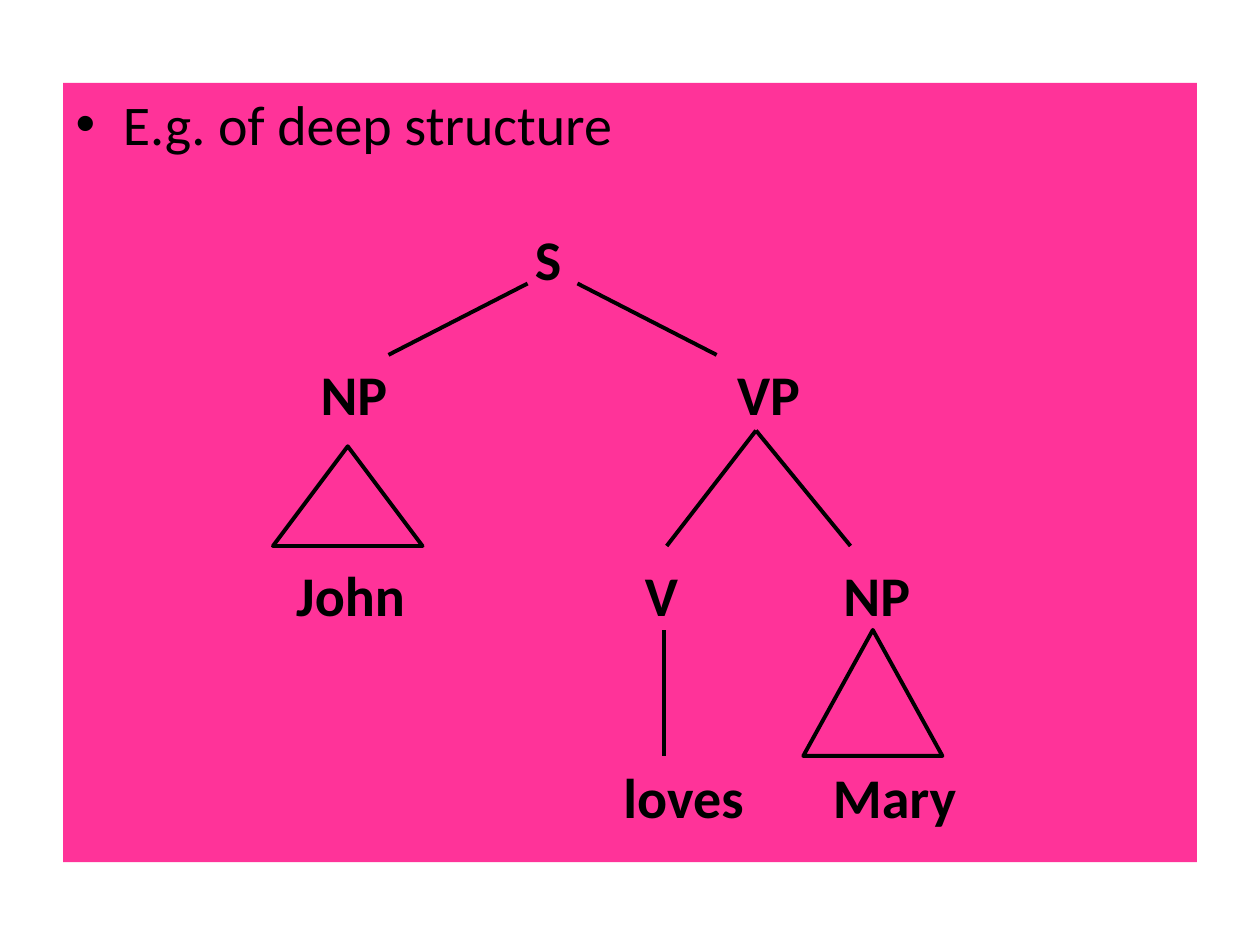
from pptx import Presentation
from pptx.dml.color import RGBColor
from pptx.enum.shapes import MSO_CONNECTOR, MSO_SHAPE
from pptx.enum.text import MSO_ANCHOR, PP_ALIGN
from pptx.oxml.ns import qn
from pptx.util import Inches, Pt
from lxml import etree

LINE = MSO_CONNECTOR.STRAIGHT
PEAK = MSO_SHAPE.ISOSCELES_TRIANGLE
MID = MSO_ANCHOR.MIDDLE
LEFT, MIDST = PP_ALIGN.LEFT, PP_ALIGN.CENTER
PINK = RGBColor(0xFF, 0x33, 0x99)
BLACK = RGBColor(0, 0, 0)

deck = Presentation()
deck.slide_width, deck.slide_height = Inches(10), Inches(7.5)
COL = deck.slide_width / 120
ROW = deck.slide_height / 90
slide = deck.slides.add_slide(deck.slide_layouts[1])
shapes = slide.shapes


def grid(x, y, wide, high):
    return [int(n) for n in (x * COL, y * ROW, wide * COL, high * ROW)]


def write(frame, text, size=32, bold=False, align=LEFT):
    para = frame.paragraphs[0]
    para.alignment = align
    run = para.add_run()
    run.text = text
    run.font.name = "Calibri"
    run.font.size = Pt(size)
    run.font.bold = bold
    run.font.color.rgb = BLACK


title = shapes.title.element
title.getparent().remove(title)
body = shapes.placeholders[1]
body.left, body.top, body.width, body.height = grid(6, 7.9, 108, 74.2)
body.fill.solid()
body.fill.fore_color.rgb = PINK
write(body.text_frame, "E.g. of deep structure")

FIRST, STEP = 24.6, 6.4
WIDE, HIGH = 16, 6.4
nodes = [
    ("S", 52.2, 0),
    ("NP", 33.7, 2), ("VP", 73.2, 2),
    ("John", 33.4, 5), ("V", 63, 5), ("NP", 83.5, 5),
    ("loves", 65.1, 8), ("Mary", 85.2, 8),
]
for word, x, level in nodes:
    y = FIRST + level * STEP
    box = shapes.add_textbox(*grid(x - WIDE / 2, y - HIGH / 2, WIDE, HIGH))
    frame = box.text_frame
    frame.word_wrap = True
    frame.vertical_anchor = MID
    frame.margin_left = frame.margin_right = 0
    frame.margin_top = frame.margin_bottom = 0
    write(frame, word, bold=True, align=MIDST)

edges = [
    (37, 33.8, 50.25, 27), (68.25, 33.8, 55, 27),
    (63.5, 52, 72, 41), (81, 52, 72, 41),
    (63.25, 60, 63.25, 72),
]
for edge in edges:
    branch = shapes.add_connector(LINE, *grid(*edge))
    branch.line.color.rgb = BLACK
    branch.line.width = Pt(2.25)
    etree.SubElement(branch.element.spPr, qn("a:effectLst"))

for spot in [(26, 42.5, 14.25, 9.5), (76.5, 60, 13.25, 12)]:
    peak = shapes.add_shape(PEAK, *grid(*spot))
    peak.shadow.inherit = False
    peak.fill.background()
    peak.line.color.rgb = BLACK
    peak.line.width = Pt(2.25)

deck.save("out.pptx")
